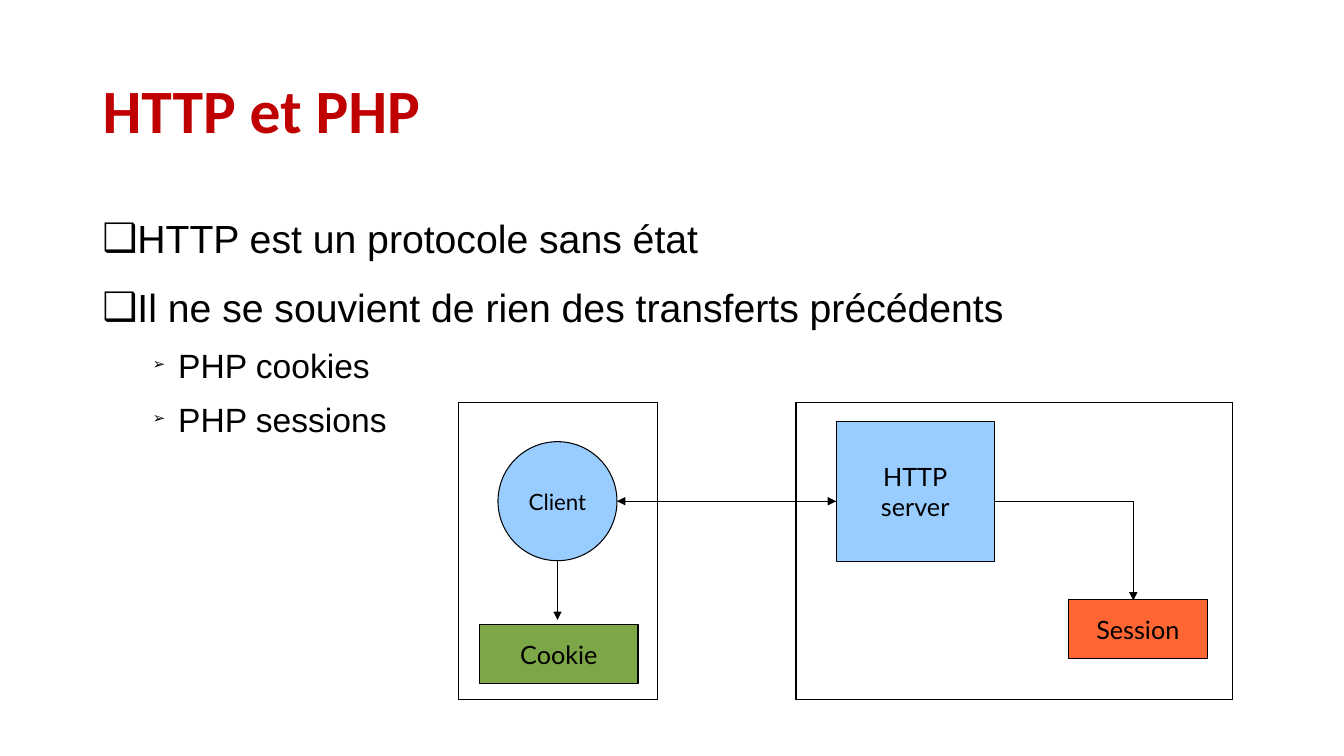
import pptx
import pptx.util
import pptx.dml.color
import pptx.enum.shapes
import pptx.enum.text
import pptx.oxml.ns
from lxml import etree

Cm, Pt = pptx.util.Cm, pptx.util.Pt
SHAPE = pptx.enum.shapes.MSO_SHAPE
ALIGN = pptx.enum.text.PP_ALIGN
ANCHOR = pptx.enum.text.MSO_ANCHOR
qn = pptx.oxml.ns.qn

COLORS = {"title": "C00000", "ink": "000000", "node": "99CCFF",
          "cookie": "7DA647", "session": "FF6633"}

# Content: lengths in cm
TITLE = "HTTP et PHP"
POINTS = [(0, "HTTP est un protocole sans état"),
          (0, "Il ne se souvient de rien des transferts précédents"),
          (1, "PHP cookies"),
          (1, "PHP sessions")]
# size, space before, left margin, bullet, bullet size in percent
LEVELS = [(28, 10, 0.64, "❑", 100), (24, 5, 1.91, "➢", 45)]
# left, top, right, bottom
FRAMES = [(11.56, 10.14, 16.56, 17.63), (20.06, 10.14, 31.06, 17.63)]
# geometry, lines, box, colour, text size
NODES = {
    "server": (SHAPE.RECTANGLE, ["HTTP", "server"], (21.07, 10.63, 3.99, 3.51), "node", 18),
    "client": (SHAPE.OVAL, ["Client"], (12.55, 11.13, 3, 3), "node", 16),
    "cookie": (SHAPE.RECTANGLE, ["Cookie"], (12.09, 15.73, 3.99, 1.5), "cookie", 18),
    "session": (SHAPE.RECTANGLE, ["Session"], (26.92, 15.1, 3.51, 1.5), "session", 18),
}


def rgb(color):
    return pptx.dml.color.RGBColor.from_string(COLORS[color])


def write(paragraph, text, size, font, color="ink", bold=False, align=None,
          spacing=None, before=None):
    run = paragraph.add_run()
    run.text = text
    run.font.size, run.font.name, run.font.bold = Pt(size), font, bold
    run.font.color.rgb = rgb(color)
    paragraph.alignment = align
    paragraph.line_spacing = spacing
    if before is not None:
        paragraph.space_before = Pt(before)


def paragraph_at(frame, index):
    return frame.add_paragraph() if index else frame.paragraphs[0]


def add_bullet(paragraph, margin, char, percent):
    props = paragraph._p.get_or_add_pPr()
    props.set("marL", str(Cm(margin)))
    props.set("indent", str(-Cm(0.64)))
    etree.SubElement(props, qn("a:buSzPct")).set("val", str(percent * 1000))
    etree.SubElement(props, qn("a:buFont")).set("typeface", "Arial")
    etree.SubElement(props, qn("a:buChar")).set("char", char)


def add_node(geometry, box, fill):
    node = slide.shapes.add_shape(geometry, *map(Cm, box))
    node.shadow.inherit = False
    node.fill.solid()
    node.fill.fore_color.rgb = rgb(fill)
    node.line.color.rgb = rgb("ink")
    node.line.width = Pt(0.75)
    return node


def add_link(start, end, arrow=False):
    link = slide.shapes.add_connector(
        pptx.enum.shapes.MSO_CONNECTOR.STRAIGHT, *map(Cm, start + end))
    link.line.color.rgb = rgb("ink")
    link.line.width = Pt(0.75)
    if arrow:
        etree.SubElement(link.line._get_or_add_ln(), qn("a:tailEnd")).set("type", "triangle")
    etree.SubElement(link._element.spPr, qn("a:effectLst"))


deck = pptx.Presentation()
deck.slide_width, deck.slide_height = Cm(33.87), Cm(19.05)
slide = deck.slides.add_slide(deck.slide_layouts[5])

# Title
title = slide.shapes.title
title.left, title.top, title.width, title.height = map(Cm, (2.33, 1.02, 29.21, 3.68))
title.text_frame.vertical_anchor = ANCHOR.MIDDLE
write(title.text_frame.paragraphs[0], TITLE, 44, "Calibri", color="title", bold=True,
      align=ALIGN.LEFT, spacing=0.9)

# Bulleted points
points = slide.shapes.add_textbox(*map(Cm, (2.33, 5.08, 29.21, 12.09))).text_frame
points.word_wrap = True
for i, (level, text) in enumerate(POINTS):
    size, before, margin, char, percent = LEVELS[level]
    point = paragraph_at(points, i)
    point.level = level
    write(point, text, size, "Arial", align=ALIGN.LEFT, spacing=1.17, before=before)
    add_bullet(point, margin, char, percent)

# Nodes
for geometry, lines, box, fill, size in NODES.values():
    label = add_node(geometry, box, fill).text_frame
    label.vertical_anchor = ANCHOR.MIDDLE
    label.word_wrap = True
    for i, line in enumerate(lines):
        write(paragraph_at(label, i), line, size, "Lato", align=ALIGN.CENTER)

# Links, all leaving at the height or the axis of the client
client_x, client_y, client_size, _ = NODES["client"][2]
server_x, _, server_width, _ = NODES["server"][2]
axis_x, axis_y = client_x + client_size / 2, client_y + client_size / 2
server_side = (server_x, axis_y)
corner = (28.56, axis_y)
add_link((18.57, axis_y), server_side, arrow=True)
add_link(server_side, (client_x + client_size, axis_y), arrow=True)
add_link((axis_x, client_y + client_size), (axis_x, 15.62), arrow=True)
add_link((server_x + server_width, axis_y), corner)
add_link(corner, (corner[0], 15.13), arrow=True)

# Client and server frames, one line per side
for left, top, right, bottom in FRAMES:
    corners = [(left, top), (left, bottom), (right, bottom), (right, top)]
    for start, end in zip(corners, corners[1:] + corners[:1]):
        add_link(start, end)

deck.save("out.pptx")
